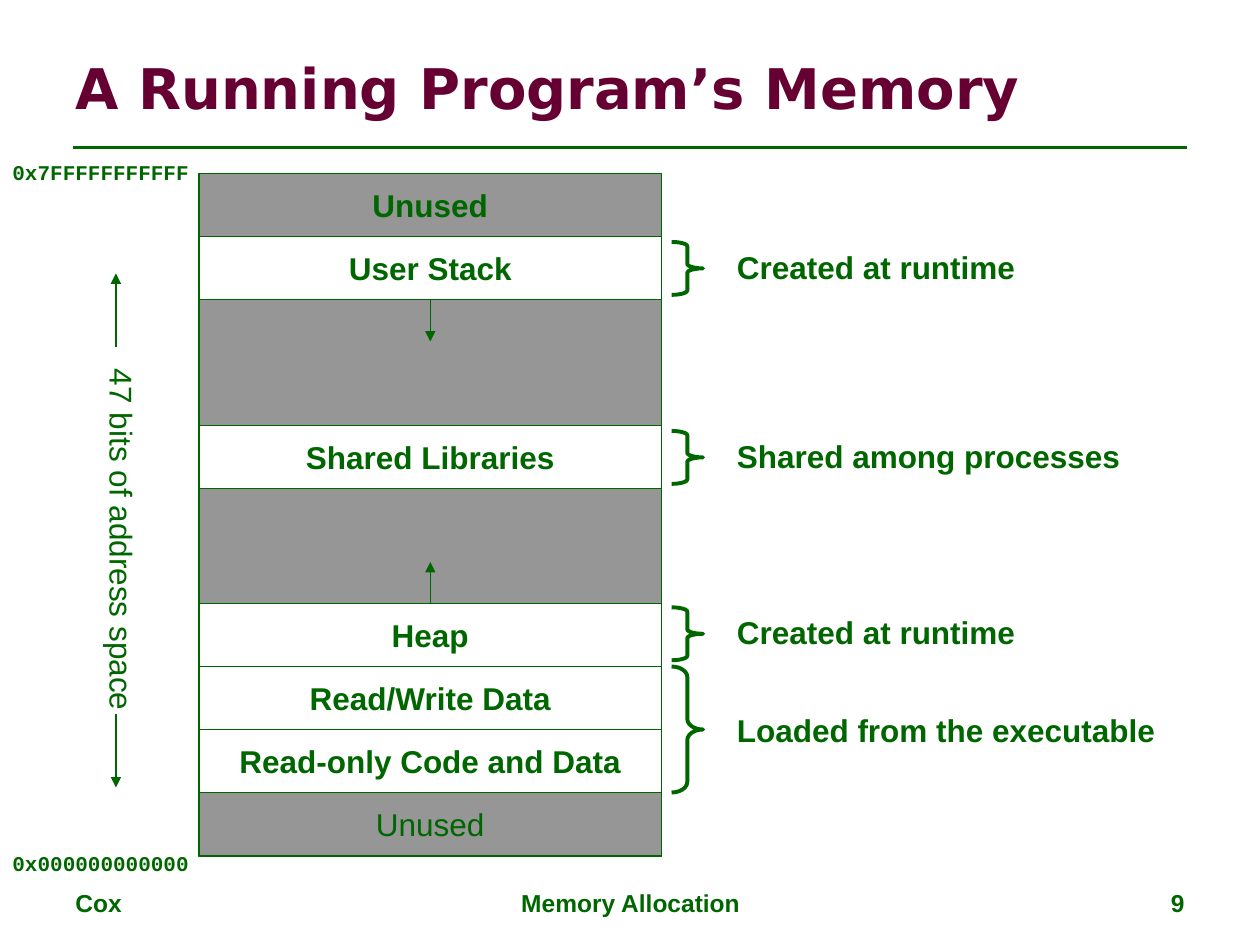
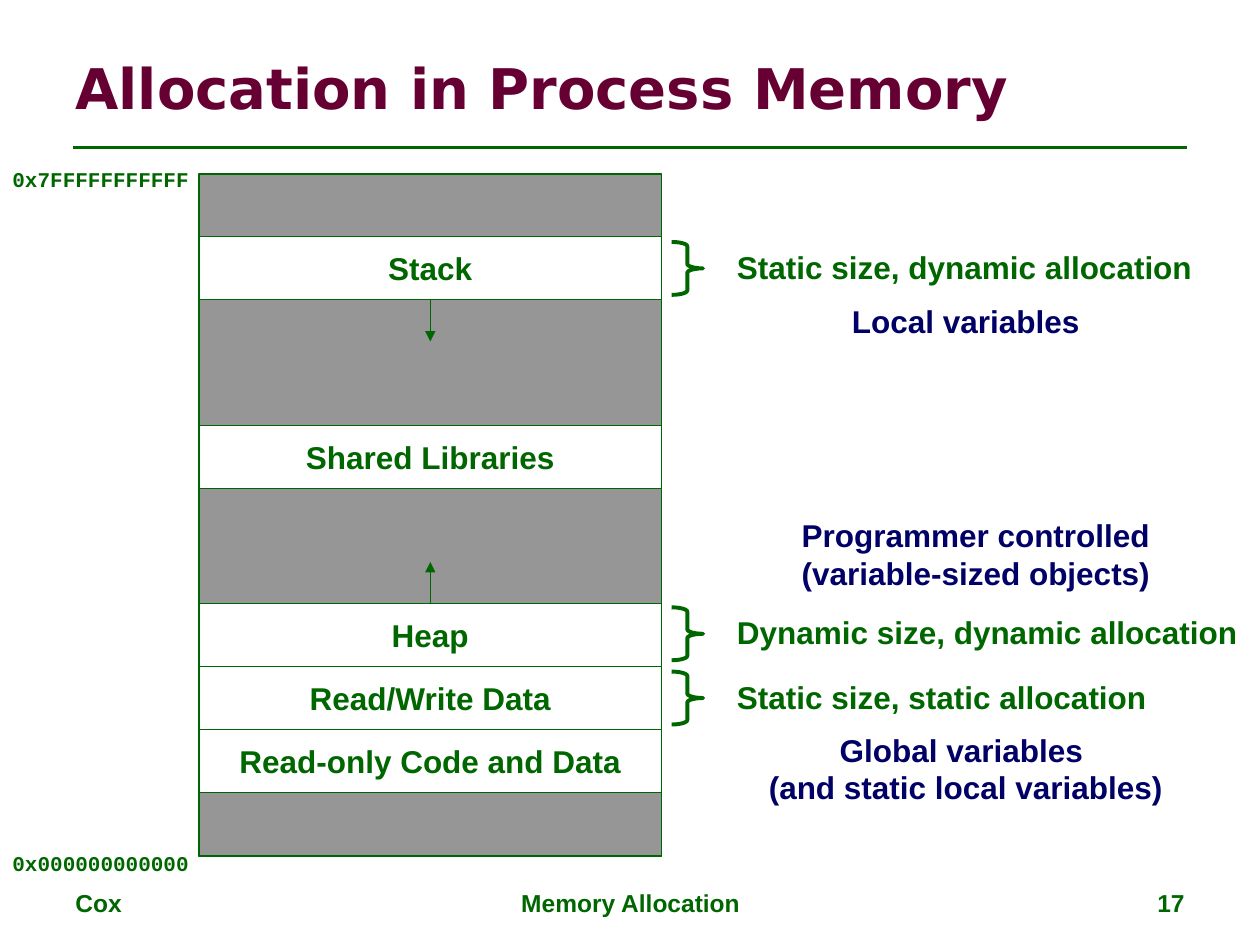
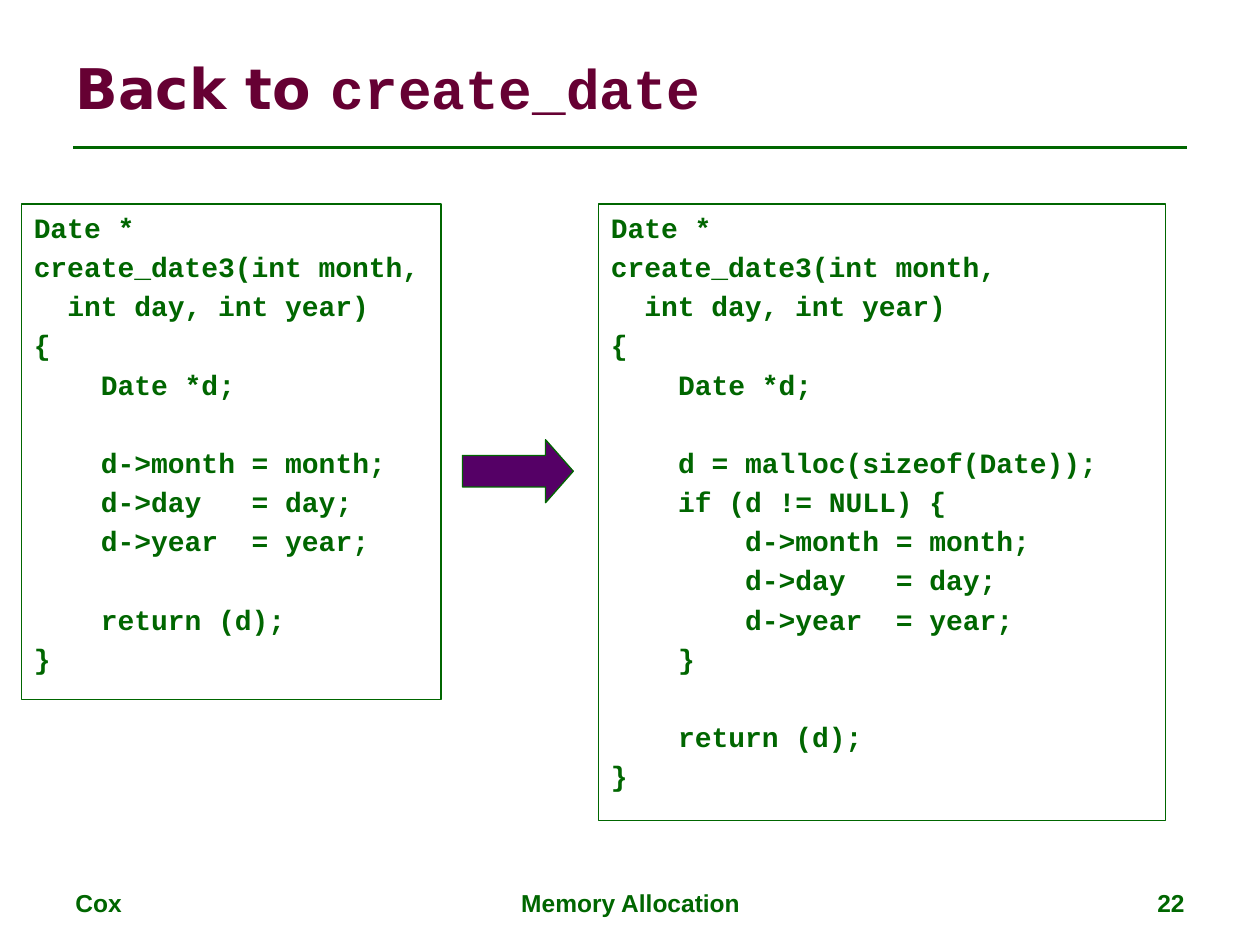
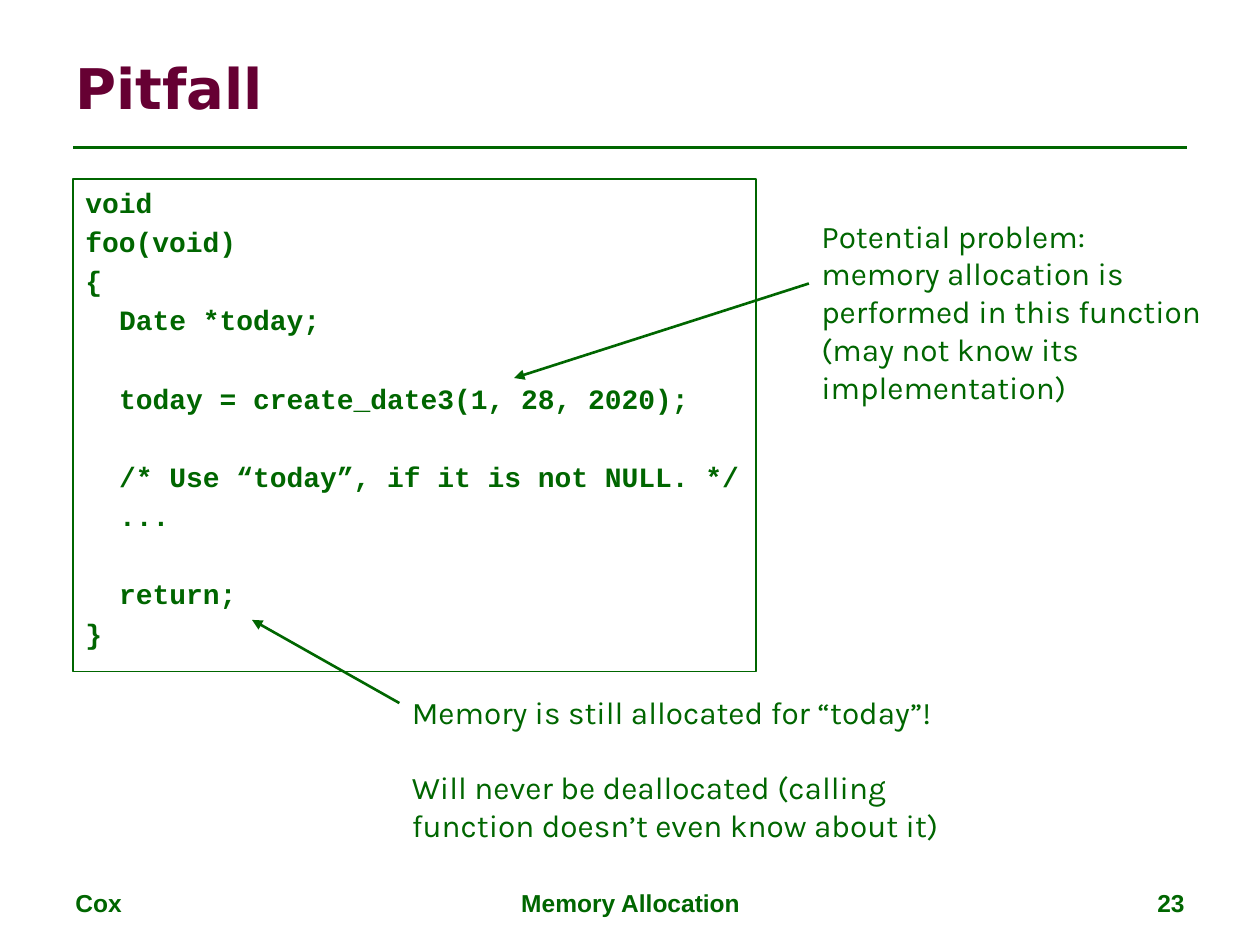
"""Build four slides on memory allocation."""
from lxml import etree
from pptx import Presentation
from pptx import util as u
from pptx.dml.color import RGBColor
from pptx.enum import shapes, text
from pptx.oxml.ns import qn

HUES = {"green": "006600", "wine": "660033", "navy": "000066",
        "plum": "550066", "grey": "969696", "white": "FFFFFF"}
SIDES = {"l": text.PP_ALIGN.LEFT, "c": text.PP_ALIGN.CENTER, "r": text.PP_ALIGN.RIGHT}
MONO = "Courier New"
SANS = "DejaVu Sans"
ROW = 0.5
LEFT, TOP, WIDE = 1.58, 1.38, 3.67


def hue(name):
    """Return the named colour."""
    return RGBColor.from_string(HUES[name])


def write(item, lines, size=18, face="Arial", color="green", bold=True,
          side="l", mid=False, wrap=True, lead=0, gap=0):
    """Fill an item with lines; an empty line widens the next space by gap."""
    frame = item.text_frame
    frame.word_wrap = wrap
    frame.vertical_anchor = text.MSO_ANCHOR.MIDDLE if mid else text.MSO_ANCHOR.TOP
    space, para = lead, None
    for line in lines:
        if not line:
            space += gap
            continue
        para = frame.add_paragraph() if para else frame.paragraphs[0]
        para.alignment = SIDES[side]
        para.space_before = u.Pt(space)
        space = lead
        runs = [(line, face)] if isinstance(line, str) else line
        first = runs[0][0]
        dent = len(first) - len(first.lstrip())
        if dent:
            props = para._p.get_or_add_pPr()
            props.set("marL", str(u.Pt(0.6 * size * dent)))
            props.set("indent", "0")
        for words, font in runs:
            run = para.add_run()
            run.text = words.lstrip() if words == first else words
            run.font.name, run.font.size = font, u.Pt(size)
            run.font.bold = bold
            run.font.color.rgb = hue(color)


def label(slide, box, *lines, **form):
    """Add a text box, which grows with its text when it does not wrap."""
    item = slide.shapes.add_textbox(*map(u.Inches, box))
    write(item, lines, **form)
    if not form.get("wrap", True):
        item.text_frame.auto_size = text.MSO_AUTO_SIZE.SHAPE_TO_FIT_TEXT
    return item


def block(slide, kind, box, fill=None, width=0.75):
    """Add an outlined preset shape."""
    item = slide.shapes.add_shape(kind, *map(u.Inches, box))
    item.shadow.inherit = False
    if fill:
        item.fill.solid()
        item.fill.fore_color.rgb = hue(fill)
    else:
        item.fill.background()
    item.line.color.rgb = hue("green")
    item.line.width = u.Pt(width)
    return item


def rule(slide, start, end, width=0.75, head=True):
    """Draw a straight line, with an arrowhead at its end if asked."""
    item = slide.shapes.add_connector(
        shapes.MSO_CONNECTOR.STRAIGHT, *map(u.Inches, (*start, *end)))
    item.line.color.rgb = hue("green")
    item.line.width = u.Pt(width)
    if head:
        etree.SubElement(item.line._get_or_add_ln(), qn("a:tailEnd"), type="triangle")
    etree.SubElement(item._element.spPr, qn("a:effectLst"))


def base(deck, title, page):
    """Add a slide with its title, rule and footer."""
    slide = deck.slides.add_slide(deck.slide_layouts[6])
    rule(slide, (0.58, 1.17), (9.42, 1.17), width=1.5, head=False)
    feet = (("Cox", 0.5, 2.33, "l"), ("Memory Allocation", 3.42, 3.17, "c"),
            (str(page), 7.17, 2.33, "r"))
    for words, left, wide, side in feet:
        label(slide, (left, 7, wide, 0.35), words, size=14, side=side)
    label(slide, (0.5, 0.3, 9, 0.78), title, size=32, face=SANS, color="wine", mid=True)
    return slide


def stack(slide, left, top, wide, names, high):
    """Draw the memory map with its growth arrows and end addresses."""
    rect = shapes.MSO_SHAPE.RECTANGLE
    block(slide, rect, (left, top, wide, 5.42), "grey")
    for name, down in names:
        last = down > 4.5
        fill = None if last else "grey" if down == 0 else "white"
        item = block(slide, rect, (left, top + down, wide, ROW), fill)
        if name:
            write(item, [name], side="c", mid=True, wrap=False, bold=not last)
    mid = left + wide / 2
    for down, step in ((3.41, -0.33), (1, 0.33)):
        rule(slide, (mid, top + down), (mid, top + down + step))
    for words, down in (("0x7FFFFFFFFFFF", high), ("0x000000000000", 6.7)):
        label(slide, (0, down, 1.61, 0.3), words, size=12, face=MONO, wrap=False)


def note(slide, left, top, words, wide, tall=0.42):
    """Draw a brace with its label beside it."""
    item = block(slide, shapes.MSO_SHAPE.RIGHT_BRACE, (left, top, 0.25, tall), width=2.25)
    item.adjustments[0] = tall / 3
    label(slide, (left + 0.42, top + (tall - 0.42) * 0.53, wide, 0.4), words, wrap=False)


def span(slide, left, top, words):
    """Draw the upright size label between two arrows."""
    item = label(slide, (left, top + 0.66, 0.5, 2.81), words, bold=False, wrap=False)
    item.text_frame._txBody.bodyPr.set("vert", "eaVert")
    mid = left + 0.25
    rule(slide, (mid, top + 3.5), (mid, top + 4.08))
    rule(slide, (mid, top + 0.58), (mid, top))


def code(slide, box, source):
    """Draw a framed code listing."""
    item = block(slide, shapes.MSO_SHAPE.RECTANGLE, box)
    write(item, source.strip().split("\n"), size=16, face=MONO, lead=3.2, gap=22.38)


def aside(slide, box, start, end, *lines):
    """Add a remark and the arrow from it to the code."""
    rule(slide, start, end, width=1.5)
    label(slide, box, *lines, face="Karla", bold=False, gap=21.4)


BODY = [("Shared Libraries", 2), ("Heap", 3.41), ("Read/Write Data", 3.91),
        ("Read-only Code and Data", 4.41)]

BEFORE = """
Date *
create_date3(int month,
  int day, int year)
{
    Date *d;

    d->month = month;
    d->day   = day;
    d->year  = year;

    return (d);
}
"""

AFTER = """
Date *
create_date3(int month,
  int day, int year)
{
    Date *d;

    d = malloc(sizeof(Date));
    if (d != NULL) {
        d->month = month;
        d->day   = day;
        d->year  = year;
    }

    return (d);
}
"""

CALLER = """
void
foo(void)
{
  Date *today;

  today = create_date3(1, 28, 2020);

  /* Use “today”, if it is not NULL. */
  ...

  return;
}
"""


def layout(deck):
    """Build the slide on a running program's memory."""
    slide = base(deck, "A Running Program’s Memory", 9)
    names = [("Unused", 0), ("User Stack", ROW), *BODY, ("Unused", 4.91)]
    stack(slide, LEFT, TOP, WIDE, names, 1.22)
    note(slide, 5.33, 5.29, "Loaded from the executable", 3.52, tall=1)
    for top, words, wide in ((4.82, "Created at runtime", 2.41),
                             (1.92, "Created at runtime", 2.41),
                             (3.42, "Shared among processes", 3.24)):
        note(slide, 5.33, top, words, wide)
    span(slide, 0.67, 2.17, "47 bits of address space")


def kinds(deck):
    """Build the slide on kinds of allocation."""
    slide = base(deck, "Allocation in Process Memory", 17)
    stack(slide, LEFT, TOP, WIDE, [("Stack", ROW), *BODY, ("", 4.91)], 1.27)
    for top, words, wide in ((4.82, "Dynamic size, dynamic allocation", 4.2),
                             (1.92, "Static size, dynamic allocation", 3.81),
                             (5.33, "Static size, static allocation", 3.45)):
        note(slide, 5.33, top, words, wide)
    for box, lines in (
            ((6, 5.75, 3.33, 0.7), ("Global variables ", "(and static local variables)")),
            ((6.66, 2.35, 2.01, 0.4), ("Local variables",)),
            ((6.26, 4.05, 2.97, 0.7), ("Programmer controlled", "(variable-sized objects)"))):
        label(slide, box, *lines, color="navy", side="c", wrap=False)


def change(deck):
    """Build the slide that compares two listings."""
    slide = base(deck, [("Back to ", SANS), ("create_date", MONO)], 22)
    code(slide, (0.17, 1.62, 3.33, 3.93), BEFORE)
    arrow = block(slide, shapes.MSO_SHAPE.RIGHT_ARROW, (3.67, 3.49, 0.88, 0.5), "plum")
    arrow.adjustments[1] = 0.44
    code(slide, (4.75, 1.62, 4.5, 4.89), AFTER)


def pitfall(deck):
    """Build the slide on the leak."""
    slide = base(deck, "Pitfall", 23)
    code(slide, (0.58, 1.42, 5.42, 3.91), CALLER)
    aside(slide, (3.17, 5.45, 4.42, 1.3), (3.17, 5.58), (2, 4.92),
          "Memory is still allocated for “today”!", "",
          "Will never be deallocated (calling function doesn’t even know about it)")
    aside(slide, (6.42, 1.67, 3.25, 1.3), (6.42, 2.25), (4.08, 3),
          "Potential problem: memory allocation is performed in this function "
          "(may not know its implementation)")


def main():
    """Build and save the deck."""
    deck = Presentation()
    deck.slide_width, deck.slide_height = u.Inches(10), u.Inches(7.5)
    for build in (layout, kinds, change, pitfall):
        build(deck)
    deck.save("out.pptx")


if __name__ == "__main__":
    main()
